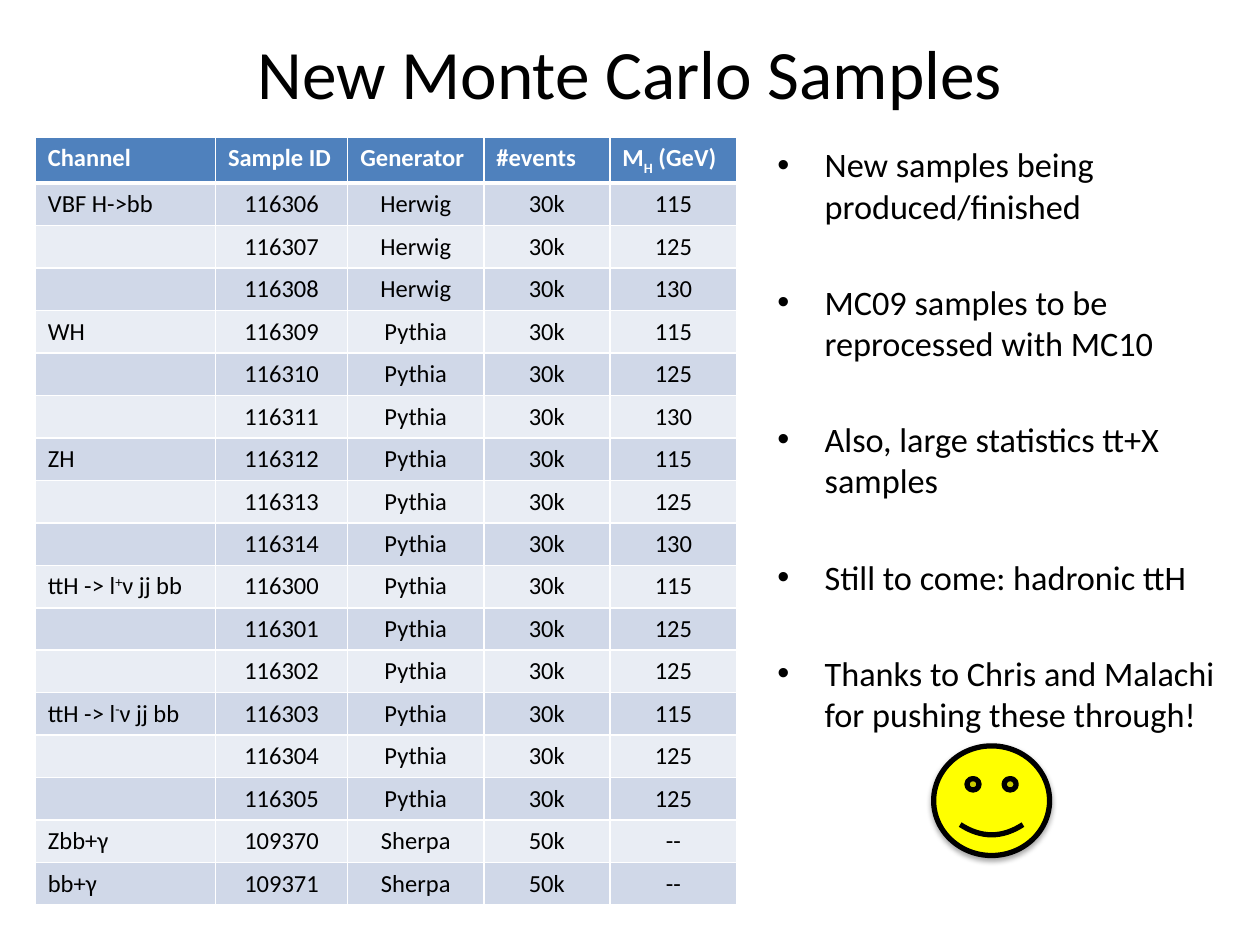
from lxml import etree
from pptx import Presentation
from pptx.dml.color import RGBColor
from pptx.enum.shapes import MSO_SHAPE
from pptx.enum.text import MSO_ANCHOR, MSO_AUTO_SIZE, PP_ALIGN
from pptx.oxml.ns import qn
from pptx.util import Inches, Pt

LEFT, CENTER = PP_ALIGN.LEFT, PP_ALIGN.CENTER
MIDDLE = MSO_ANCHOR.MIDDLE
NO_AUTOFIT = MSO_AUTO_SIZE.NONE
SMILEY = MSO_SHAPE.SMILEY_FACE

COLORS = {
    "text": "000000",
    "white": "FFFFFF",
    "header": "4F81BD",
    "odd_row": "D0D8E8",
    "even_row": "E9EDF4",
    "smiley": "FFFF00",
}
FONT = "Calibri"
SUBSCRIPT, SUPERSCRIPT = -25, 30

HEADER = ["Channel", "Sample ID", "Generator", "#events",
          ["M", ("H", SUBSCRIPT), " (GeV)"]]
COLUMN_WIDTHS = [1.43, 1.05, 1.08, 1, 1.01]
# Channel, first sample ID, generator, number of events, Higgs masses
CHANNELS = [
    ("VBF H->bb", 116306, "Herwig", "30k", ["115", "125", "130"]),
    ("WH", 116309, "Pythia", "30k", ["115", "125", "130"]),
    ("ZH", 116312, "Pythia", "30k", ["115", "125", "130"]),
    (["ttH -> l", ("+", SUPERSCRIPT), "ν jj bb"], 116300, "Pythia", "30k",
     ["115", "125", "125"]),
    (["ttH -> l", ("-", SUPERSCRIPT), "ν jj bb"], 116303, "Pythia", "30k",
     ["115", "125", "125"]),
    ("Zbb+γ", 109370, "Sherpa", "50k", ["--"]),
    ("bb+γ", 109371, "Sherpa", "50k", ["--"]),
]
BULLETS = [
    "New samples being produced/finished",
    "MC09 samples to be reprocessed with MC10",
    "Also, large statistics tt+X samples",
    "Still to come: hadronic ttH",
    "Thanks to Chris and Malachi for pushing these through!",
]


def rgb(name):
    return RGBColor.from_string(COLORS[name])


def add_text(paragraph, text, size, color="text", bold=False, align=LEFT):
    """Fill a paragraph with a string, or a list of strings and (string, baseline) pairs."""
    paragraph.alignment = align
    if not text:
        # An empty cell still needs its size, or its row grows.
        etree.SubElement(paragraph._p, qn("a:endParaRPr"), sz=str(size * 100))
        return
    for part in [text] if isinstance(text, str) else text:
        content, baseline = (part, 0) if isinstance(part, str) else part
        run = paragraph.add_run()
        run.text = content
        run.font.name = FONT
        run.font.size = Pt(size)
        run.font.bold = bold
        run.font.color.rgb = rgb(color)
        if baseline:
            run._r.get_or_add_rPr().set("baseline", str(baseline * 1000))


def add_color(parent, name, opacity=100):
    color = etree.SubElement(parent, qn("a:srgbClr"), val=COLORS[name])
    if opacity < 100:
        etree.SubElement(color, qn("a:alpha"), val=str(opacity * 1000))


def set_borders(cell, **widths):
    """Draw white cell borders; widths in points by side: L, R, T, B."""
    properties = cell._tc.get_or_add_tcPr()
    for position, side in enumerate("LRTB"):
        line = etree.Element(qn(f"a:ln{side}"), w=str(Pt(widths.get(side, 1))))
        add_color(etree.SubElement(line, qn("a:solidFill")), "white")
        properties.insert(position, line)


def sample_rows():
    """Expand each channel into one row per mass, naming the channel only once."""
    for channel, first_id, generator, events, masses in CHANNELS:
        for offset, mass in enumerate(masses):
            yield ["" if offset else channel, str(first_id + offset),
                   generator, events, mass]


class SlideBuilder:
    def __init__(self, slide, title_size, body_size, table_size):
        self.slide = slide
        self.title_size = title_size
        self.body_size = body_size
        self.table_size = table_size

    def place(self, shape, left, top, width, height):
        shape.left, shape.top = Inches(left), Inches(top)
        shape.width, shape.height = Inches(width), Inches(height)

    def title(self, text, *box):
        shape = self.slide.shapes.title
        self.place(shape, *box)
        frame = shape.text_frame
        frame.auto_size = NO_AUTOFIT
        frame.vertical_anchor = MIDDLE
        add_text(frame.paragraphs[0], text, self.title_size, align=CENTER)

    def bullets(self, items, *box):
        shape = self.slide.placeholders[1]
        self.place(shape, *box)
        frame = shape.text_frame
        frame.auto_size = NO_AUTOFIT
        for index, item in enumerate(items):
            paragraph = frame.add_paragraph() if index else frame.paragraphs[0]
            paragraph.space_before = Pt(4)
            paragraph.space_after = Pt(27.5)
            add_text(paragraph, item, self.body_size)

    def table(self, rows, widths, left, top, height):
        table = self.slide.shapes.add_table(
            len(rows), len(widths), Inches(left), Inches(top),
            Inches(sum(widths)), Inches(height)).table
        for column, width in zip(table.columns, widths):
            column.width = Inches(width)
        for row_index, row in enumerate(rows):
            for column_index, text in enumerate(row):
                self.cell(table.cell(row_index, column_index), text,
                          row_index, column_index)

    def cell(self, cell, text, row_index, column_index):
        is_header = row_index == 0
        fill = "header" if is_header else "odd_row" if row_index % 2 else "even_row"
        cell.fill.solid()
        cell.fill.fore_color.rgb = rgb(fill)
        set_borders(cell, T=3 if row_index == 1 else 1, B=3 if is_header else 1)
        add_text(cell.text_frame.paragraphs[0], text, self.table_size,
                 color="white" if is_header else "text", bold=is_header,
                 align=LEFT if is_header or column_index == 0 else CENTER)

    def smiley(self, left, top, width, height):
        shape = self.slide.shapes.add_shape(
            SMILEY, Inches(left), Inches(top), Inches(width), Inches(height))
        shape.fill.solid()
        shape.fill.fore_color.rgb = rgb("smiley")
        shape.line.color.rgb = rgb("text")
        shape.line.width = Pt(3)
        shape.shadow.inherit = False
        effects = shape._element.spPr.find(qn("a:effectLst"))
        shadow = etree.SubElement(
            effects, qn("a:outerShdw"), blurRad=str(Pt(3.1)), dist=str(Pt(1.8)),
            dir=str(90 * 60000), rotWithShape="0")
        add_color(shadow, "text", opacity=35)


def main():
    presentation = Presentation()
    presentation.slide_width, presentation.slide_height = Inches(10), Inches(7.5)
    slide = presentation.slides.add_slide(presentation.slide_layouts[1])
    builder = SlideBuilder(slide, title_size=39.6, body_size=19.6, table_size=14)
    builder.title("New Monte Carlo Samples", 0.5, 0.26, 9, 0.62)
    builder.bullets(BULLETS, 6.07, 1.09, 3.71, 4.93)
    builder.table([HEADER, *sample_rows()], COLUMN_WIDTHS, left=0.28, top=1.09, height=6)
    builder.smiley(7.41, 5.92, 0.92, 0.87)
    presentation.save("out.pptx")


if __name__ == "__main__":
    main()
